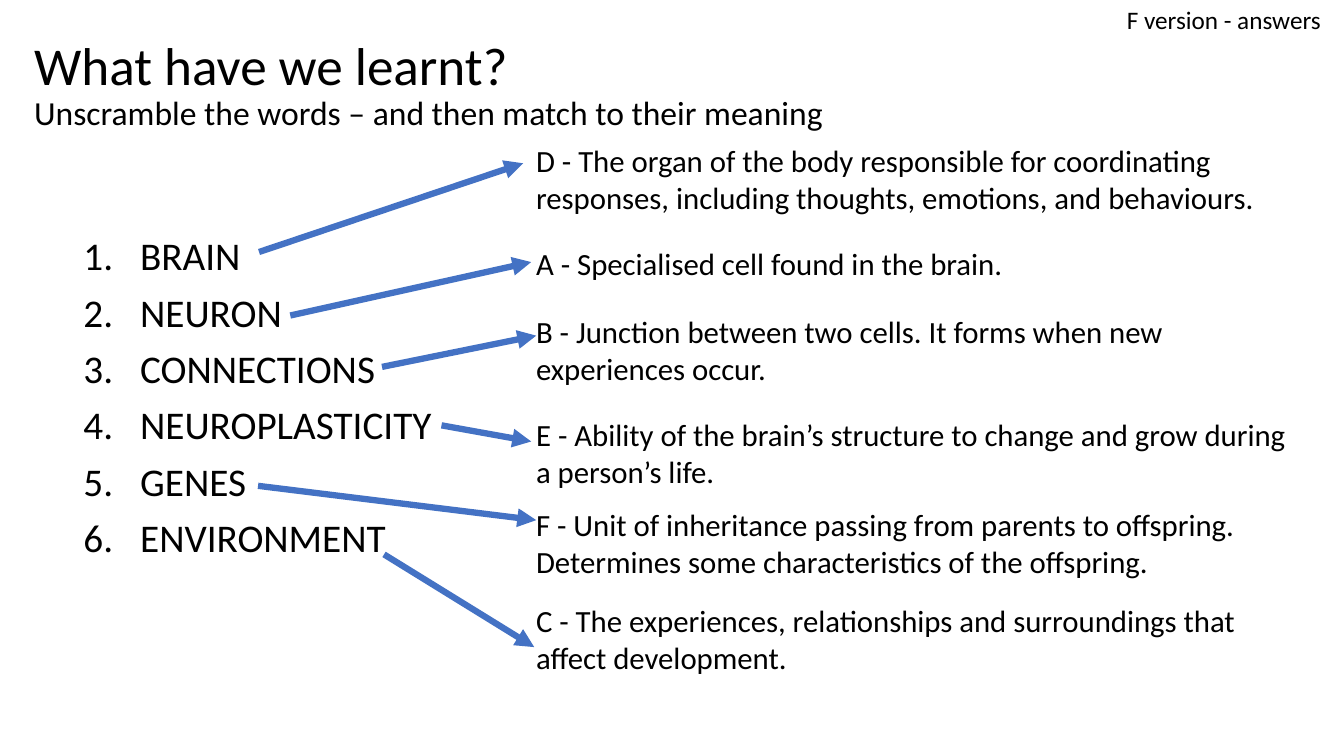
from dataclasses import dataclass

from lxml.etree import SubElement
from pptx import Presentation
from pptx.dml.color import RGBColor
from pptx.enum.shapes import MSO_CONNECTOR
from pptx.enum.text import MSO_ANCHOR
from pptx.oxml.ns import qn
from pptx.util import Pt


@dataclass(frozen=True)
class Theme:
    font: str = "Calibri"
    text: RGBColor = RGBColor(0, 0, 0)
    arrow: RGBColor = RGBColor(0x44, 0x72, 0xC4)
    arrow_width: float = 4.5
    title_size: int = 38
    subtitle_size: int = 24
    word_size: int = 28
    meaning_size: int = 22
    label_size: int = 18


THEME = Theme()
MEANING_LEFT = 375.84
MEANING_WIDTH = 558

# Each word with its arrow's start and end, in points
WORDS = [
    ("BRAIN", (185.04, 180), (373.68, 116.64)),
    ("NEURON", (207.36, 225.36), (379.44, 187.2)),
    ("CONNECTIONS", (272.88, 262.08), (383.04, 239.76)),
    ("NEUROPLASTICITY", (315.36, 303.84), (379.44, 315.36)),
    ("GENES", (184.32, 347.04), (383.04, 371.52)),
    ("ENVIRONMENT", (274.32, 396), (381.6, 462.24)),
]

# Each meaning with its top and height, in points
MEANINGS = [
    ("D - The organ of the body responsible for coordinating responses, "
     "including thoughts, emotions, and behaviours.", 97.92, 60.5),
    ("A - Specialised cell found in the brain.", 171.36, 33.84),
    ("B - Junction between two cells. It forms when new experiences occur.",
     219.6, 60.5),
    ("E - Ability of the brain’s structure to change and grow during "
     "a person’s life.", 293.76, 60.5),
    ("F - Unit of inheritance passing from parents to offspring. "
     "Determines some characteristics of the offspring.", 357.84, 60.5),
    ("C - The experiences, relationships and surroundings that "
     "affect development.", 426.24, 60.5),
]


def format_run(run, size):
    run.font.name = THEME.font
    run.font.size = Pt(size)
    run.font.color.rgb = THEME.text


def add_text(slide, text, left, top, width, height, size):
    box = slide.shapes.add_textbox(Pt(left), Pt(top), Pt(width), Pt(height))
    text_frame = box.text_frame
    text_frame.word_wrap = True
    text_frame.text = text
    for paragraph in text_frame.paragraphs:
        for run in paragraph.runs:
            format_run(run, size)
    return text_frame


def add_title(slide, title, subtitle):
    text_frame = add_text(slide, f"{title}\v{subtitle}", 17.28, 18, 930, 80.64,
                          THEME.title_size)
    text_frame.vertical_anchor = MSO_ANCHOR.BOTTOM
    paragraph = text_frame.paragraphs[0]
    paragraph.line_spacing = 0.9
    paragraph.runs[1].font.size = Pt(THEME.subtitle_size)


def add_numbered_list(slide, items, left, top, width, height):
    text_frame = add_text(slide, "\n".join(items), left, top, width, height,
                          THEME.word_size)
    for paragraph in text_frame.paragraphs:
        paragraph.line_spacing = 0.9
        paragraph.space_before = Pt(10)
        properties = paragraph._p.get_or_add_pPr()
        properties.set("marL", str(Pt(40.5)))
        properties.set("indent", str(Pt(-40.5)))
        SubElement(properties, qn("a:buFont"), typeface="+mj-lt")
        SubElement(properties, qn("a:buAutoNum"), type="arabicPeriod")


def add_arrow(slide, start, end):
    arrow = slide.shapes.add_connector(
        MSO_CONNECTOR.STRAIGHT, *(Pt(value) for value in start + end))
    arrow.line.color.rgb = THEME.arrow
    arrow.line.width = Pt(THEME.arrow_width)
    SubElement(arrow.line._get_or_add_ln(), qn("a:tailEnd"), type="triangle")
    SubElement(arrow._element.spPr, qn("a:effectLst"))


def main():
    presentation = Presentation()
    presentation.slide_width = Pt(960)
    presentation.slide_height = Pt(540)
    slide = presentation.slides.add_slide(presentation.slide_layouts[6])

    add_title(slide, "What have we learnt?",
              "Unscramble the words – and then match to their meaning")
    add_text(slide, "F version - answers", 797.76, -0.72, 162, 28.8,
             THEME.label_size)
    add_numbered_list(slide, [word for word, _, _ in WORDS],
                      52.56, 165.6, 296.64, 274.32)
    for meaning, top, height in MEANINGS:
        add_text(slide, meaning, MEANING_LEFT, top, MEANING_WIDTH, height,
                 THEME.meaning_size)
    for _, start, end in WORDS:
        add_arrow(slide, start, end)

    presentation.save("out.pptx")


if __name__ == "__main__":
    main()
